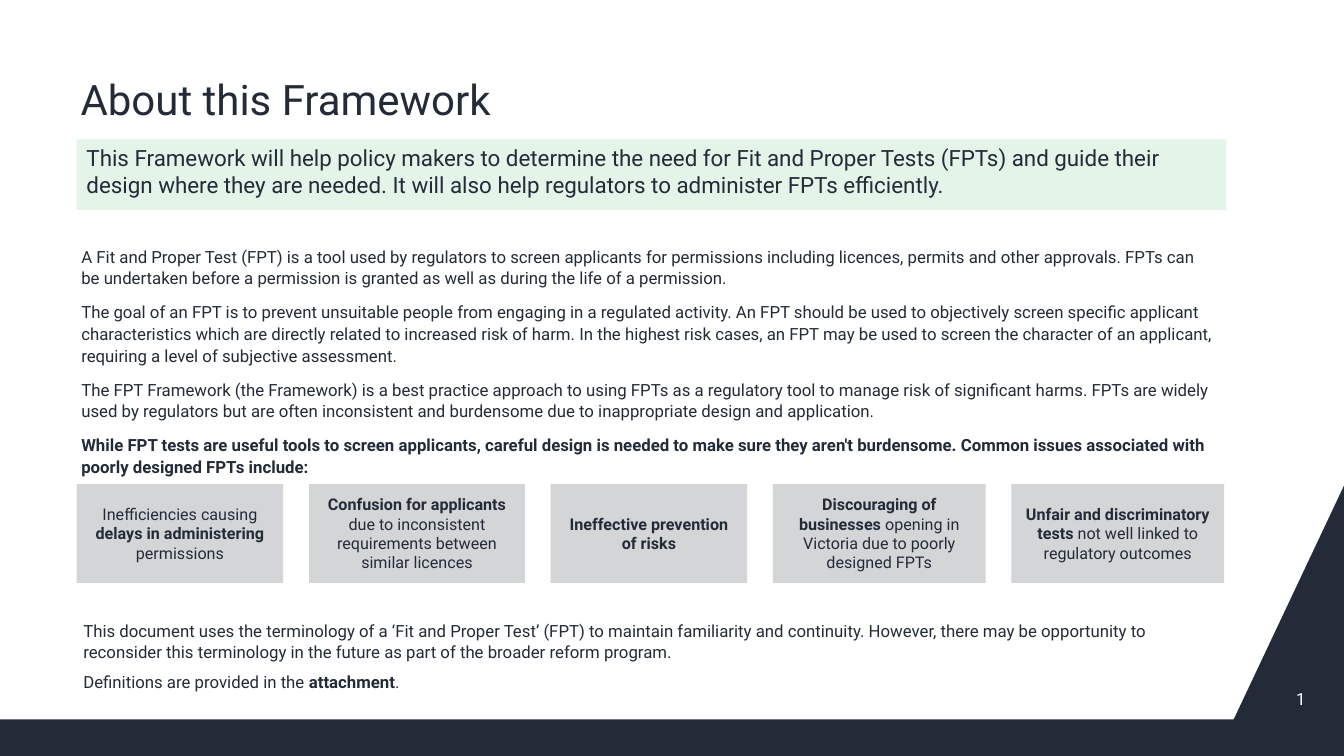
import pptx
import pptx.util
import pptx.dml.color
import pptx.enum.shapes
import pptx.enum.text

Cm = pptx.util.Cm
Pt = pptx.util.Pt
Align = pptx.enum.text.PP_ALIGN
Anchor = pptx.enum.text.MSO_ANCHOR

NAVY = pptx.dml.color.RGBColor(0x23, 0x2B, 0x39)
MINT = pptx.dml.color.RGBColor(0xE4, 0xF4, 0xE8)
GREY = pptx.dml.color.RGBColor(0xD3, 0xD5, 0xD7)
WHITE = pptx.dml.color.RGBColor(0xFF, 0xFF, 0xFF)

FONT = "Roboto"
PAGE_WIDTH, PAGE_HEIGHT = 33.87, 19.05
LEFT = 1.93

# Each paragraph is a list of (wording, bold) spans
BANNER = [[("This Framework will help policy makers to determine the need for Fit and Proper Tests (FPTs) "
            "and guide their design where they are needed. It will also help regulators to administer "
            "FPTs efficiently.", False)]]
BODY = [
    [("A Fit and Proper Test (FPT) is a tool used by regulators to screen applicants for permissions "
      "including licences, permits and other approvals. FPTs can be undertaken before a permission is "
      "granted as well as during the life of a permission.", False)],
    [("The goal of an FPT is to prevent unsuitable people from engaging in a regulated activity. An FPT "
      "should be used to objectively screen specific applicant characteristics which are directly related "
      "to increased risk of harm. In the highest risk cases, an FPT may be used to screen the character of "
      "an applicant, requiring a level of subjective assessment.", False)],
    [("The FPT Framework (the Framework) is a best practice approach to using FPTs as a regulatory tool to "
      "manage risk of significant harms. FPTs are widely used by regulators but are often inconsistent and "
      "burdensome due to inappropriate design and application.", False)],
    [("While FPT tests are useful tools to screen applicants, careful design is needed to make sure they "
      "aren't burdensome. Common issues associated with poorly designed FPTs include:", True)],
]
CLOSING = [
    [("This document uses the terminology of a ‘Fit and Proper Test’ (FPT) to maintain familiarity and "
      "continuity. However, there may be opportunity to reconsider this terminology in the future as part "
      "of the broader reform program.", False)],
    [("Definitions are provided in the ", False), ("attachment", True), (".", False)],
]

# Width of each issue box, and its spans
ISSUES = [
    (5.21, [("Inefficiencies causing ", False), ("delays in administering ", True), ("permissions", False)]),
    (5.44, [("Confusion for applicants ", True),
            ("due to inconsistent requirements between similar licences", False)]),
    (4.95, [("Ineffective prevention of risks", True)]),
    (5.36, [("Discouraging of businesses ", True), ("opening in Victoria due to poorly designed FPTs", False)]),
    (5.36, [("Unfair and discriminatory tests ", True), ("not well linked to regulatory outcomes", False)]),
]
ISSUE_TOP, ISSUE_HEIGHT, ISSUE_GAP = 12.2, 2.49, 0.65


def write(frame, paragraphs, size, color=NAVY, align=Align.LEFT, anchor=Anchor.TOP,
          before=0, after=0, line=1.0):
    """Fill a text frame with paragraphs, span by span."""
    frame.word_wrap = True
    frame.vertical_anchor = anchor
    for number, spans in enumerate(paragraphs):
        para = frame.add_paragraph() if number else frame.paragraphs[0]
        para.alignment = align
        para.space_before, para.space_after = Pt(before), Pt(after)
        para.line_spacing = line
        for wording, bold in spans:
            span = para.add_run()
            span.text = wording
            span.font.name, span.font.size, span.font.bold = FONT, Pt(size), bold
            span.font.color.rgb = color


def paint(shape, color):
    shape.shadow.inherit = False
    shape.fill.solid()
    shape.fill.fore_color.rgb = color
    shape.line.fill.background()


def add_panel(page, left, top, width, height, color, paragraphs, size, **style):
    panel = page.shapes.add_shape(pptx.enum.shapes.MSO_SHAPE.RECTANGLE,
                                  Cm(left), Cm(top), Cm(width), Cm(height))
    paint(panel, color)
    write(panel.text_frame, paragraphs, size, **style)


def add_text(page, left, top, width, height, paragraphs, size, **style):
    box = page.shapes.add_textbox(Cm(left), Cm(top), Cm(width), Cm(height))
    write(box.text_frame, paragraphs, size, **style)


def add_footer_band(page):
    """Dark strip along the bottom, rising into the right corner."""
    top, slope_foot, corner = 18.13, 31.09, 12.24
    builder = page.shapes.build_freeform(Cm(0), Cm(top))
    outline = [(0, PAGE_HEIGHT), (PAGE_WIDTH, PAGE_HEIGHT), (PAGE_WIDTH, corner), (slope_foot, top)]
    builder.add_line_segments([(Cm(x), Cm(y)) for x, y in outline], close=True)
    paint(builder.convert_to_shape(), NAVY)


def set_title(page, wording):
    title = page.shapes.title
    title.left, title.top, title.width, title.height = Cm(LEFT), Cm(0.41), Cm(29.03), Cm(2.87)
    frame = title.text_frame
    frame.margin_left = frame.margin_right = Cm(0.1)
    frame.margin_top = frame.margin_bottom = Cm(0.13)
    frame.auto_size = pptx.enum.text.MSO_AUTO_SIZE.NONE
    write(frame, [[(wording, False)]], 30, anchor=Anchor.BOTTOM, line=0.9)


def add_issues(page):
    left = LEFT
    for width, spans in ISSUES:
        add_panel(page, left, ISSUE_TOP, width, ISSUE_HEIGHT, GREY, [spans], 11.5,
                  align=Align.CENTER, anchor=Anchor.MIDDLE)
        left += width + ISSUE_GAP


def main():
    deck = pptx.Presentation()
    deck.slide_width, deck.slide_height = Cm(PAGE_WIDTH), Cm(PAGE_HEIGHT)
    page = deck.slides.add_slide(deck.slide_layouts[5])

    # Background, title and key message
    add_footer_band(page)
    set_title(page, "About this Framework")
    add_panel(page, LEFT, 3.51, 28.98, 1.78, MINT, BANNER, 16, before=2, after=2)

    # Explanation, issues and closing remarks
    add_text(page, 1.8, 6.05, 29.03, 6.15, BODY, 12, after=9, line=1.07)
    add_issues(page)
    add_text(page, 1.85, 15.47, 28.98, 2.87, CLOSING, 12, after=6, line=1.07)

    # Page number
    add_text(page, 31.93, 17.09, 1.22, 1.02, [[("1", False)]], 12, color=WHITE,
             align=Align.RIGHT, anchor=Anchor.MIDDLE)

    deck.save("out.pptx")


if __name__ == "__main__":
    main()
